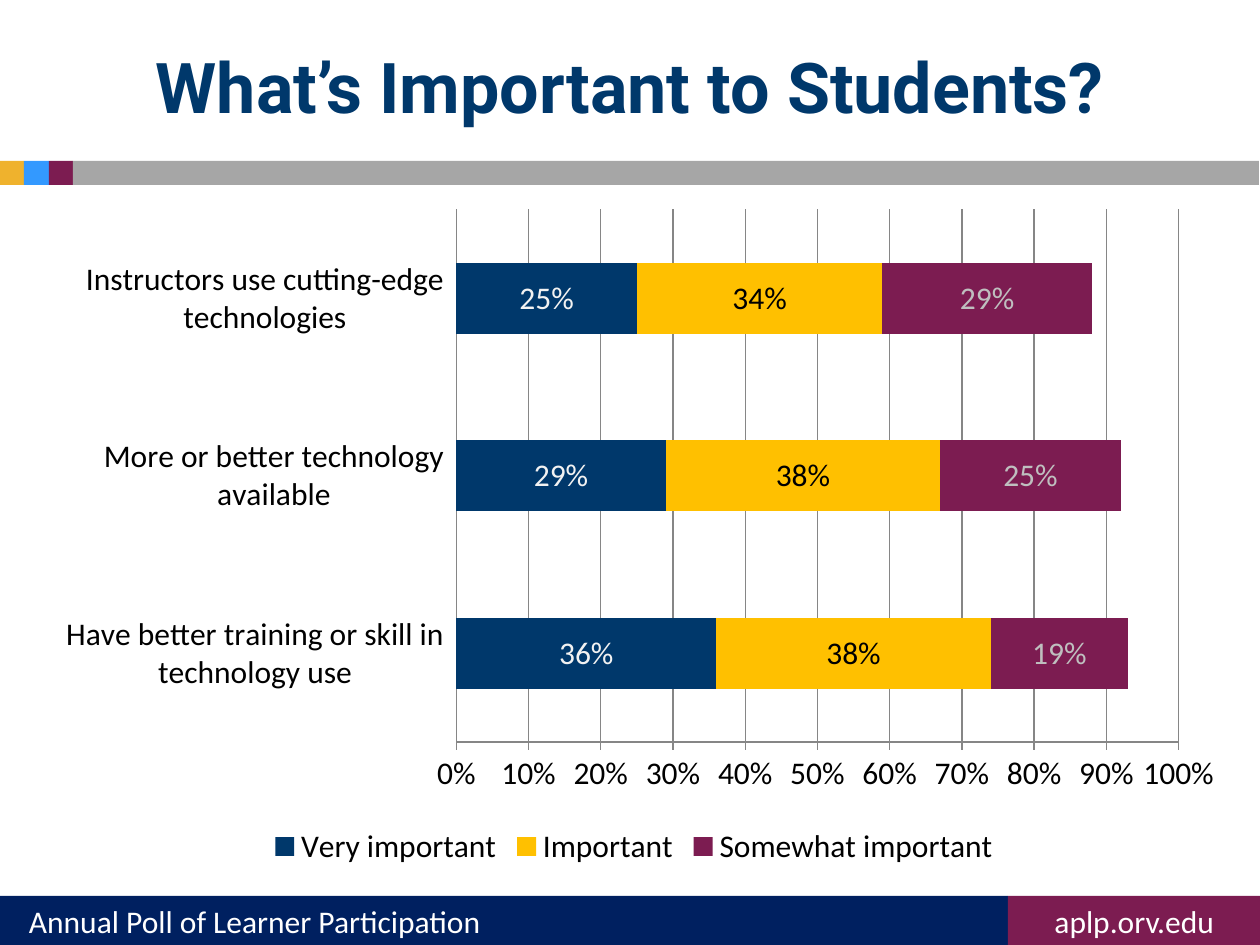
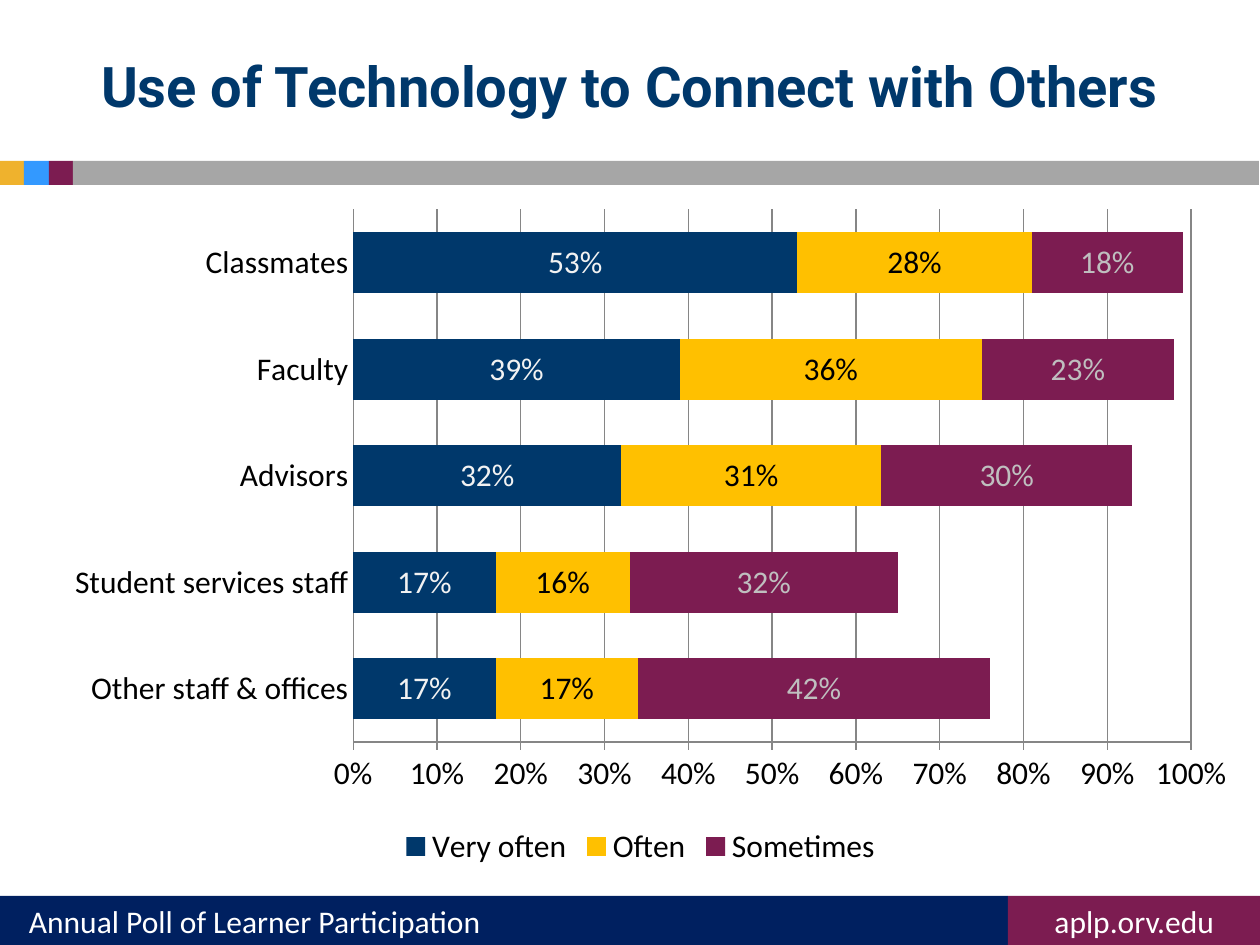
"""Build two slides of stacked bar charts on students and technology."""
import pptx
import pptx.chart.data
import pptx.dml.color
import pptx.enum.chart
import pptx.enum.shapes
import pptx.enum.text
import pptx.oxml
import pptx.oxml.ns
import pptx.util

PX = 914400 / 126
HUES = {
    "navy": "00386B", "gold": "FFC000", "plum": "7C1C51", "foot": "002060",
    "amber": "EFB22D", "sky": "3399FF", "gray": "A6A6A6", "grid": "868686",
    "white": "FFFFFF", "black": "000000", "pale": "F2F2F2", "silver": "BFBFBF",
}
BANDS = ["amber", "sky", "plum", "gray"]
EDGES = [0, 24, 49, 73, 1259]
FEET = [
    ("Annual Poll of Learner Participation", 0, 1008, "foot", "LEFT", 29),
    ("aplp.orv.edu", 1008, 252, "plum", "CENTER", 13),
]
LOOKS = [("navy", "pale"), ("gold", "black"), ("plum", "silver")]
SLIDES = [
    {
        "title": "What’s Important to Students?", "size": 40,
        "wide": 1184, "gap": 150, "plot": (0.35, 0.61), "labels": "LOW",
        "cats": ["Have better training or skill in technology use",
                 "More or better technology available",
                 "Instructors use cutting-edge technologies"],
        "rows": {"Very important": [0.36, 0.29, 0.25],
                 "Important": [0.38, 0.38, 0.34],
                 "Somewhat important": [0.19, 0.25, 0.29]},
    },
    {
        "title": "Use of Technology to Connect with Others", "size": 32,
        "wide": 1197, "gap": 75, "plot": (0.26, 0.7), "labels": "NEXT_TO_AXIS",
        "cats": ["Other staff & offices", "Student services staff",
                 "Advisors", "Faculty", "Classmates"],
        "rows": {"Very often": [0.17, 0.17, 0.32, 0.39, 0.53],
                 "Often": [0.17, 0.16, 0.31, 0.36, 0.28],
                 "Sometimes": [0.42, 0.32, 0.3, 0.23, 0.18]},
    },
]


def style(font, hue, size=18, face="Calibri"):
    font.name = face
    font.size = pptx.util.Pt(size)
    font.color.rgb = pptx.dml.color.RGBColor.from_string(HUES[hue])


def block(slide, left, top, wide, high, hue):
    box = slide.shapes.add_shape(
        pptx.enum.shapes.MSO_SHAPE.RECTANGLE,
        *(round(n * PX) for n in (left, top, wide, high)))
    box.shadow.inherit = False
    box.fill.solid()
    box.fill.fore_color.rgb = pptx.dml.color.RGBColor.from_string(HUES[hue])
    box.line.fill.background()
    return box


deck = pptx.Presentation()
deck.slide_width = round(1260 * PX)
deck.slide_height = round(945 * PX)
kinds = pptx.enum.chart
align = pptx.enum.text.PP_ALIGN
middle = pptx.enum.text.MSO_ANCHOR.MIDDLE

for page in SLIDES:
    slide = deck.slides.add_slide(deck.slide_layouts[6])

    for text, left, wide, hue, side, inset in FEET:
        frame = block(slide, left, 896, wide, 49, hue).text_frame
        frame.margin_left = round(inset * PX)
        frame.margin_top = frame.margin_bottom = round(6 * PX)
        frame.vertical_anchor = middle
        line = frame.paragraphs[0]
        line.alignment = align[side]
        run = line.add_run()
        run.text = text
        style(run.font, "white")

    for hue, left, right in zip(BANDS, EDGES, EDGES[1:]):
        block(slide, left, 161, right - left, 24, hue)

    data = pptx.chart.data.CategoryChartData(number_format="0%")
    data.categories = page["cats"]
    for name, vals in page["rows"].items():
        data.add_series(name, vals)
    chart = slide.shapes.add_chart(
        kinds.XL_CHART_TYPE.BAR_STACKED,
        *(round(n * PX) for n in (42, 189, page["wide"], 683)), data).chart
    chart.has_title = False
    style(chart.font, "black")
    chart.has_legend = True
    chart.legend.position = kinds.XL_LEGEND_POSITION.BOTTOM
    chart.legend.include_in_layout = False
    style(chart.legend.font, "black")

    plot = chart.plots[0]
    plot.gap_width = page["gap"]
    plot.overlap = 100
    plot.vary_by_categories = False
    for bar, (hue, ink) in zip(plot.series, LOOKS):
        bar.format.fill.solid()
        bar.format.fill.fore_color.rgb = pptx.dml.color.RGBColor.from_string(HUES[hue])
        tags = bar.data_labels
        tags.show_value = True
        tags.number_format = "0%"
        tags.number_format_is_linked = False
        style(tags.font, ink)

    cat, val = chart.category_axis, chart.value_axis
    cat.major_tick_mark = kinds.XL_TICK_MARK.NONE
    cat.tick_label_position = kinds.XL_TICK_LABEL_POSITION[page["labels"]]
    val.minimum_scale, val.maximum_scale, val.major_unit = 0, 1, 0.1
    val.major_tick_mark = kinds.XL_TICK_MARK.OUTSIDE
    val.has_major_gridlines = True
    val.tick_labels.number_format = "0%"
    val.tick_labels.number_format_is_linked = False
    for part in (cat, val, val.major_gridlines):
        part.format.line.color.rgb = pptx.dml.color.RGBColor.from_string(HUES["grid"])
        part.format.line.width = pptx.util.Pt(0.75)
    for axis in (cat, val):
        style(axis.tick_labels.font, "black")

    area = chart.element.chart.plotArea
    for old in area.findall(pptx.oxml.ns.qn("c:layout")):
        area.remove(old)
    left, wide = page["plot"]
    spots = [("layoutTarget", "inner"), ("xMode", "edge"), ("yMode", "edge"),
             ("x", left), ("y", 0.03), ("w", wide), ("h", 0.78)]
    inner = "".join(f'<c:{tag} val="{spot}"/>' for tag, spot in spots)
    area.insert(0, pptx.oxml.parse_xml(
        f'<c:layout {pptx.oxml.ns.nsdecls("c")}>'
        f"<c:manualLayout>{inner}</c:manualLayout></c:layout>"))

    title = slide.shapes.add_textbox(
        *(round(n * PX) for n in (0, 21, 1260, 129))).text_frame
    title.word_wrap = True
    title.vertical_anchor = middle
    line = title.paragraphs[0]
    line.alignment = align.CENTER
    run = line.add_run()
    run.text = page["title"]
    run.font.bold = True
    style(run.font, "navy", page["size"], "Roboto")

deck.save("out.pptx")
